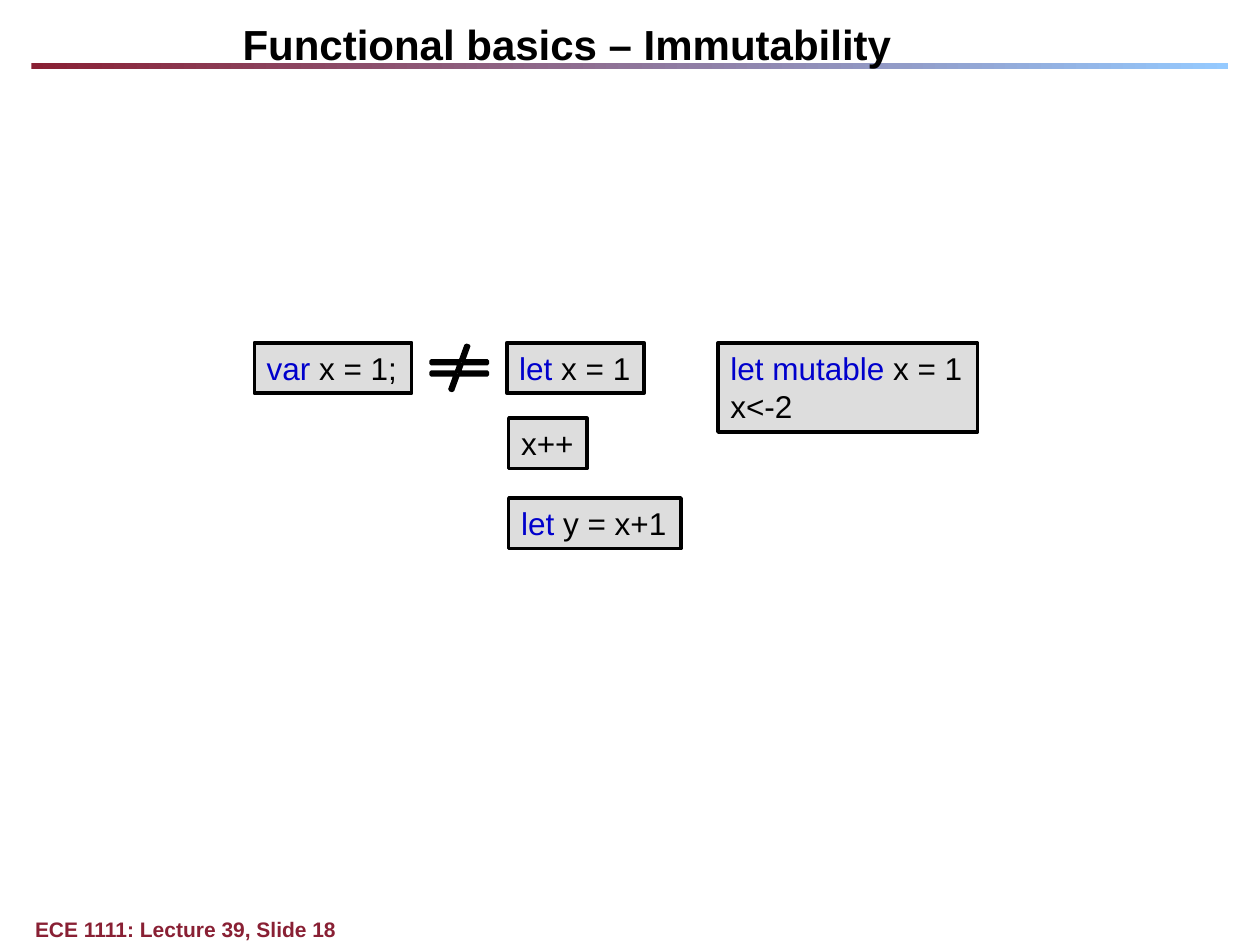
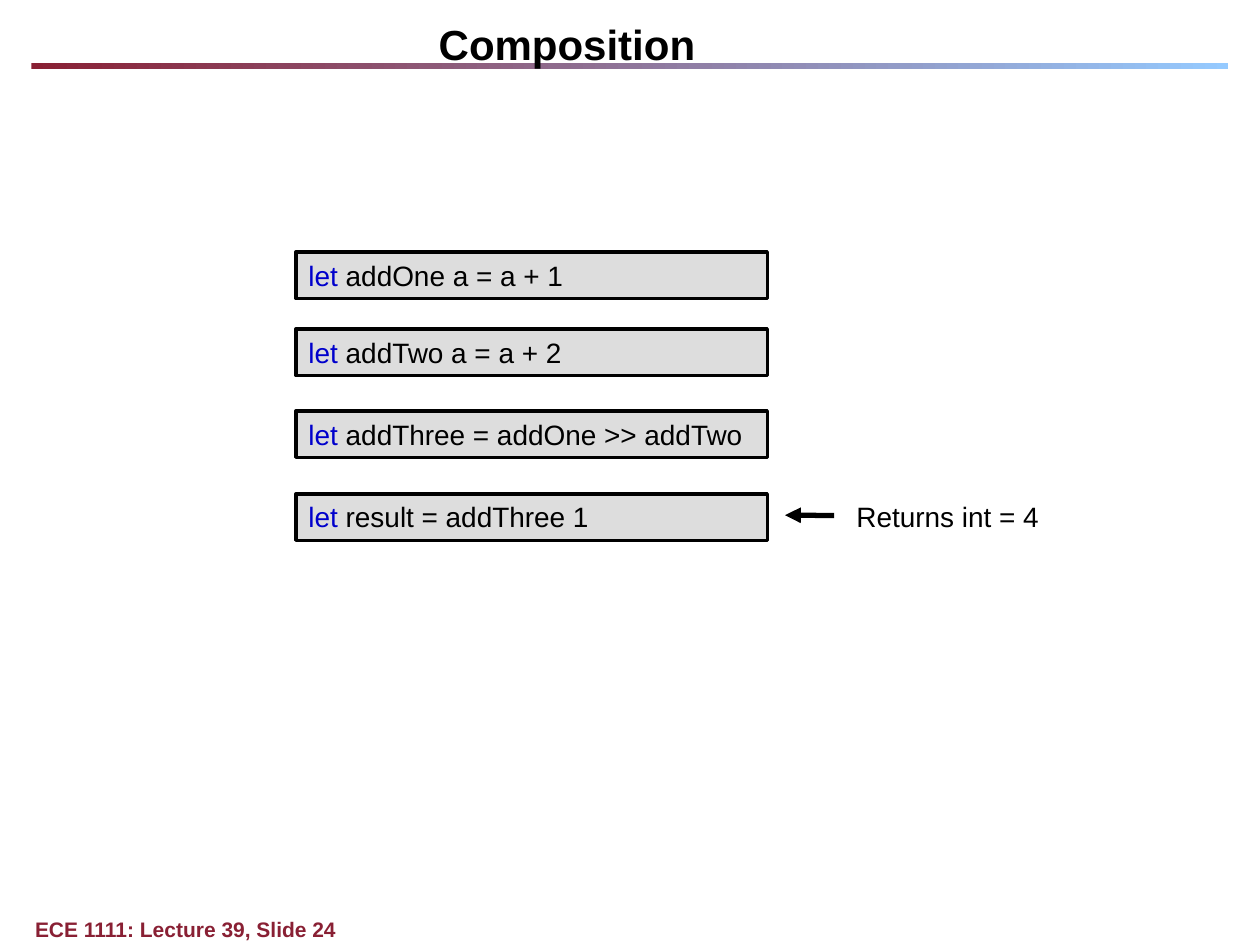
from lxml import etree
from pptx import Presentation
from pptx import util as u
from pptx.dml.color import RGBColor
from pptx.enum import shapes, text
from pptx.oxml.ns import qn

MAROON = RGBColor(0x89, 0x20, 0x34)
SKY = RGBColor(0x95, 0xCA, 0xFF)
BLACK = RGBColor(0, 0, 0)
KEYWORD_BLUE = RGBColor(0, 0, 0xCC)
CODE_GREY = RGBColor(0xDD, 0xDD, 0xDD)
FONT = "Arial"
TITLE_ONLY = 5


def points(*lengths):
    return [u.Pt(length) for length in lengths]


def style(run, size, color=BLACK, bold=False):
    run.font.name = FONT
    run.font.size = u.Pt(size)
    run.font.bold = bold
    run.font.color.rgb = color


def add_label(slide, wording, box, size, color=BLACK, bold=False, inset=True):
    label = slide.shapes.add_textbox(*points(*box))
    frame = label.text_frame
    frame.word_wrap = False
    if not inset:
        frame.margin_left = frame.margin_right = 0
        frame.margin_top = frame.margin_bottom = 0
    frame.text = wording
    style(frame.paragraphs[0].runs[0], size, color, bold)


def add_titled_slide(prs, heading, number):
    """Add a slide with its title, gradient rule and lecture footer."""
    slide = prs.slides.add_slide(prs.slide_layouts[TITLE_ONLY])
    title = slide.shapes.title
    title.left, title.top, title.width, title.height = points(0, 4.3, 648, 28.8)
    frame = title.text_frame
    frame.text = heading
    frame.auto_size = text.MSO_AUTO_SIZE.NONE
    frame.vertical_anchor = text.MSO_ANCHOR.TOP
    frame.margin_top, frame.margin_bottom = points(6.5, 0)
    frame.paragraphs[0].alignment = text.PP_ALIGN.CENTER
    style(frame.paragraphs[0].runs[0], 24, bold=True)

    rule = slide.shapes.add_shape(shapes.MSO_SHAPE.RECTANGLE, *points(18, 36, 684, 3.6))
    rule.shadow.inherit = False
    rule.line.fill.background()
    rule.fill.gradient()
    rule.fill.gradient_angle = 0
    for stop, color in zip(rule.fill.gradient_stops, (MAROON, SKY)):
        stop.color.rgb = color
    # The title's descenders lie over the rule.
    title._element.addprevious(rule._element)

    add_label(slide, f"ECE 1111: Lecture 39, Slide {number}",
              (20, 523.6, 642.2, 14.4), 12, MAROON, bold=True, inset=False)
    return slide


def add_grey_shape(slide, preset, box):
    shape = slide.shapes.add_shape(preset, *points(*box))
    shape.shadow.inherit = False
    shape.fill.solid()
    shape.fill.fore_color.rgb = CODE_GREY
    shape.line.color.rgb = BLACK
    shape.line.width = u.Pt(2)
    return shape


def add_code_box(slide, lines, box, size, wrap=False):
    """Draw a box of code; each line is a (keyword, rest) pair."""
    frame = add_grey_shape(slide, shapes.MSO_SHAPE.RECTANGLE, box).text_frame
    frame.word_wrap = wrap
    frame.vertical_anchor = text.MSO_ANCHOR.TOP
    for index, (keyword, rest) in enumerate(lines):
        paragraph = frame.add_paragraph() if index else frame.paragraphs[0]
        paragraph.alignment = text.PP_ALIGN.LEFT
        for part, color in ((keyword, KEYWORD_BLUE), (rest, BLACK)):
            if part:
                run = paragraph.add_run()
                run.text = part
                style(run, size, color)


def add_arrow(slide, start, end):
    arrow = slide.shapes.add_connector(
        shapes.MSO_CONNECTOR.STRAIGHT, *points(*start, *end))
    arrow.line.color.rgb = BLACK
    arrow.line.width = u.Pt(3)
    etree.SubElement(arrow.line._get_or_add_ln(), qn("a:tailEnd"), type="triangle")
    etree.SubElement(arrow._element.spPr, qn("a:effectLst"))


def build_immutability(prs):
    slide = add_titled_slide(prs, "Functional basics – Immutability", 18)
    row_top, line_height = 195.9, 28.8
    add_code_box(slide, [("var", " x = 1;")], (145.3, row_top, 90, line_height), 18)
    not_equal = add_grey_shape(slide, shapes.MSO_SHAPE.MATH_NOT_EQUAL,
                               (240.5, 197.3, 43.9, 25.9))
    for index, value in enumerate((0.06, 66, 0.19)):
        not_equal.adjustments[index] = value
    add_code_box(slide, [("let", " x = 1")], (289.6, row_top, 78.5, line_height), 18)
    add_code_box(slide, [("", "x++")], (290.7, 239, 44.7, line_height), 18)
    add_code_box(slide, [("let", " y = x+1")], (290.7, 284.6, 98.5, line_height), 18)
    add_code_box(slide, [("let mutable", " x = 1"), ("", "x<-2")],
                 (410.3, row_top, 148.3, 51), 18)


def build_composition(prs):
    slide = add_titled_slide(prs, "Composition", 24)
    definitions = (
        (144, "addOne a = a + 1"),
        (188, "addTwo a = a + 2"),
        (234.8, "addThree = addOne >> addTwo"),
        (282.2, "result = addThree 1"),
    )
    for top, definition in definitions:
        add_code_box(slide, [("let ", definition)],
                     (169.2, top, 269.3, 26.6), 16, wrap=True)
    add_arrow(slide, (476.6, 294.6), (448.6, 294.4))
    add_label(slide, "Returns int = 4", (482.3, 282.2, 120, 26.6), 16)


def main():
    prs = Presentation()
    prs.slide_width, prs.slide_height = points(720, 540)
    build_immutability(prs)
    build_composition(prs)
    prs.save("out.pptx")


if __name__ == "__main__":
    main()
